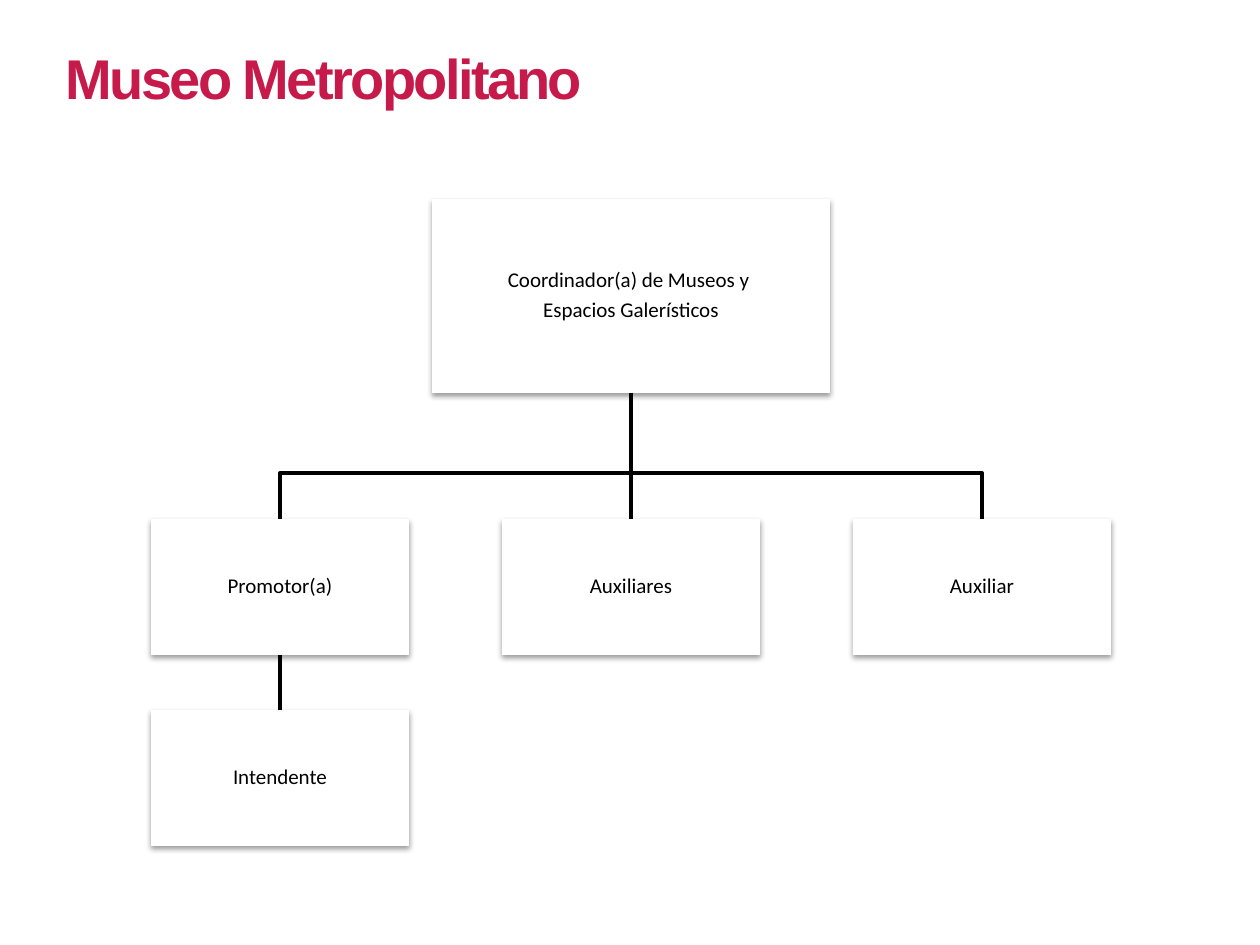
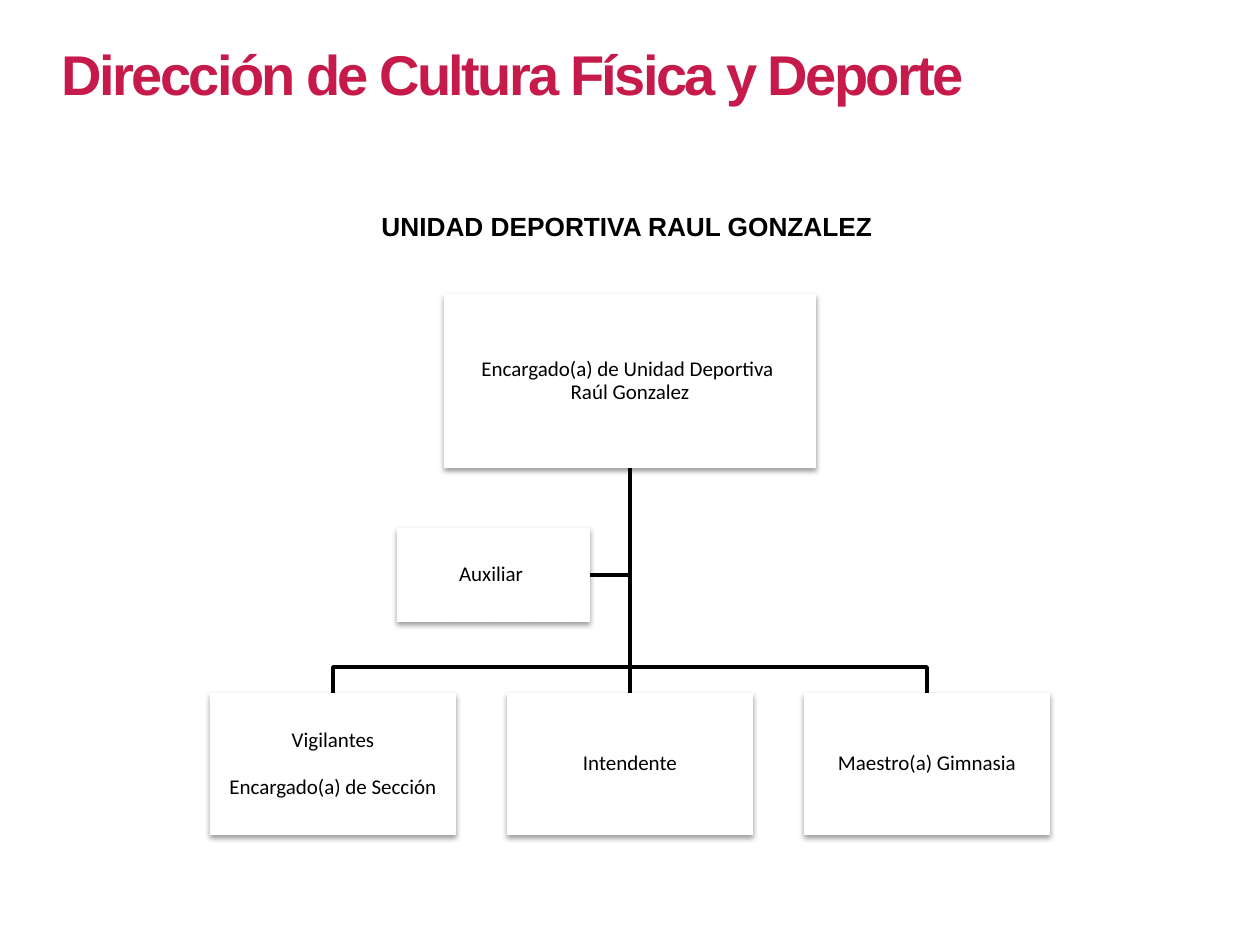
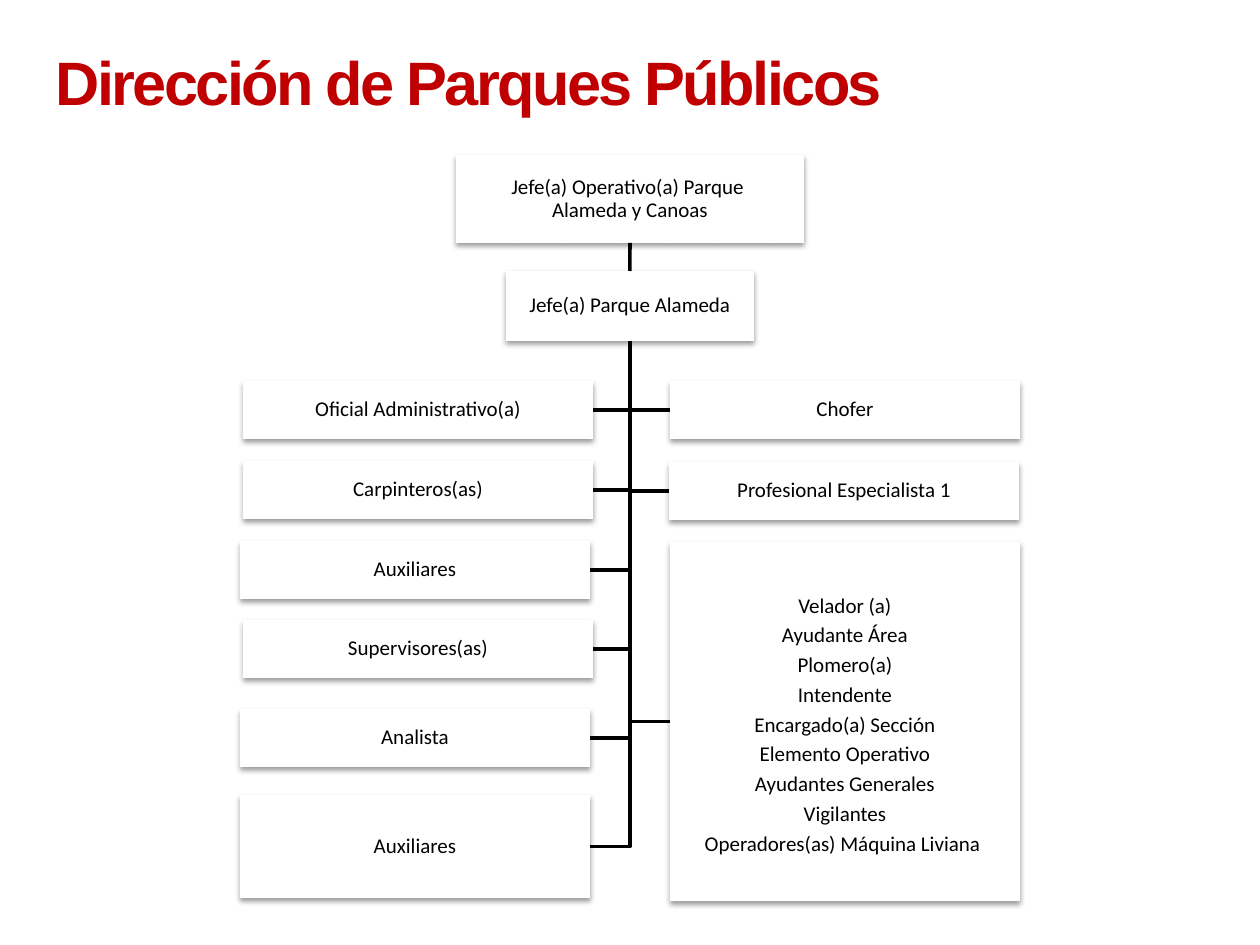
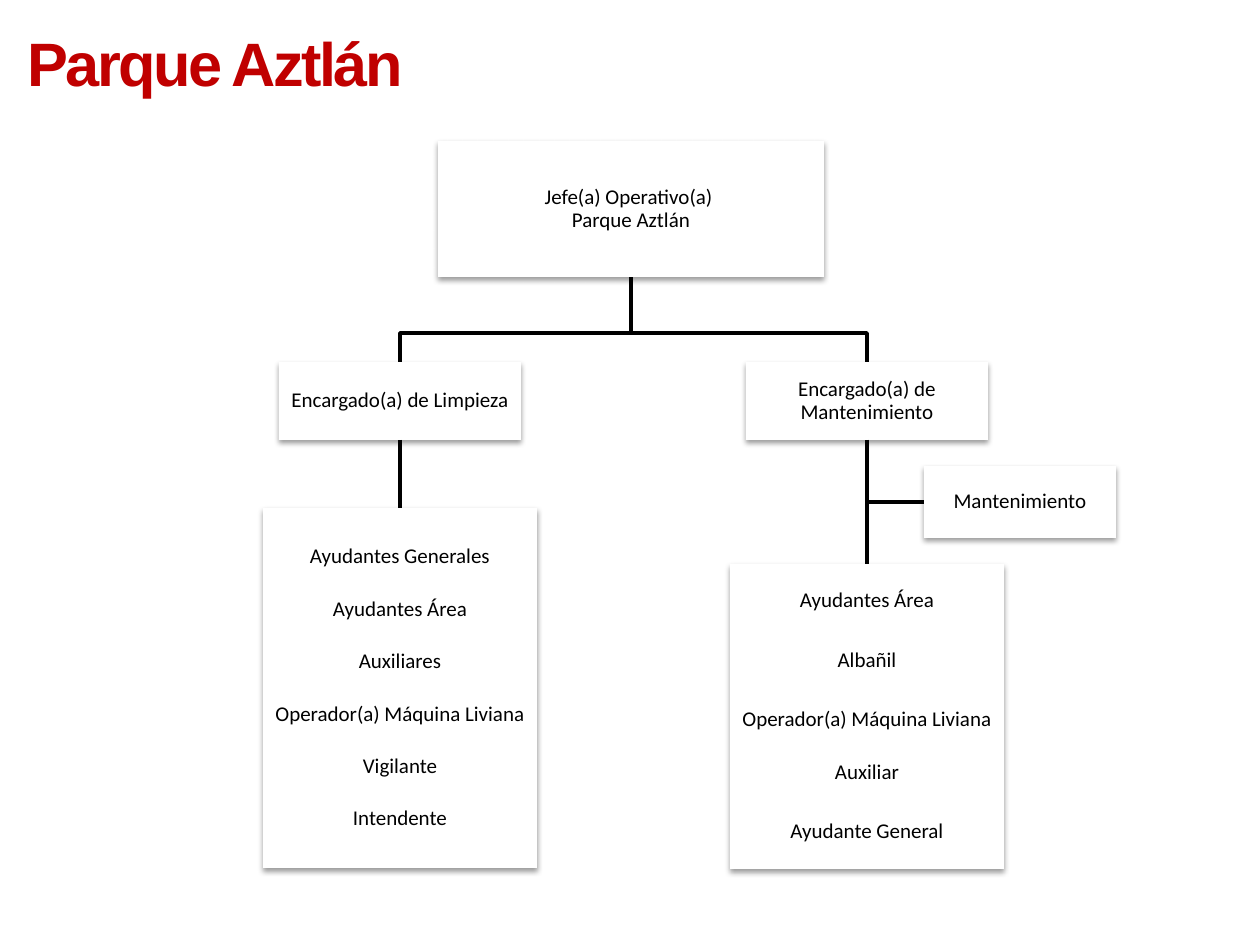
"""Build four organisation charts of museums, sport and parks."""
from lxml import etree
from pptx import Presentation
from pptx.dml.color import RGBColor
from pptx.enum.shapes import MSO_CONNECTOR, MSO_SHAPE
from pptx.enum.text import MSO_ANCHOR, MSO_AUTO_SIZE, PP_ALIGN
from pptx.oxml import parse_xml
from pptx.oxml.ns import nsdecls, qn
from pptx.util import Emu, Pt

BLACK = RGBColor(0x00, 0x00, 0x00)
WHITE = RGBColor(0xFF, 0xFF, 0xFF)
ROSE = RGBColor(0xC5, 0x1A, 0x4A)
RED = RGBColor(0xC0, 0x00, 0x00)
RECT = MSO_SHAPE.RECTANGLE
STRAIGHT = MSO_CONNECTOR.STRAIGHT
TOP, MIDDLE = MSO_ANCHOR.TOP, MSO_ANCHOR.MIDDLE
LEFT, CENTER = PP_ALIGN.LEFT, PP_ALIGN.CENTER
NO_FIT = MSO_AUTO_SIZE.NONE
SCALE = 914400 / 126
TITLE_ONLY = 5
SHADE = (
    f'<a:outerShdw {nsdecls("a")} blurRad="40000" dist="20000" dir="5400000" '
    'rotWithShape="0"><a:srgbClr val="000000"><a:alpha val="38000"/>'
    '</a:srgbClr></a:outerShdw>'
)


def px(*sizes):
    """Turn px lengths into EMU."""
    return [Emu(round(size * SCALE)) for size in sizes]


def style(para, face, size, color, bold=False):
    """Set the font of a paragraph."""
    font = para.font
    font.name, font.size, font.bold = face, Pt(size), bold
    font.color.rgb = color


def new_slide(deck, text, place, size, color):
    """Add a slide with its title."""
    slide = deck.slides.add_slide(deck.slide_layouts[TITLE_ONLY])
    title = slide.shapes.title
    title.left, title.top, title.width, title.height = px(*place)
    frame = title.text_frame
    frame.text = text
    frame.auto_size, frame.vertical_anchor = NO_FIT, TOP
    para = frame.paragraphs[0]
    para.alignment = LEFT
    style(para, "Arial", size, color, True)
    para.runs[0]._r.get_or_add_rPr().set("spc", "-150")
    return slide


def heading(slide, text, place):
    """Add a bold line above a chart."""
    frame = slide.shapes.add_textbox(*px(*place)).text_frame
    frame.word_wrap = False
    frame.text = text
    style(frame.paragraphs[0], "Arial", 15, BLACK, True)


def post(slide, text, place, gaps=(), pitch=0.9):
    """Add a shadowed box for one post or a list of posts."""
    box = slide.shapes.add_shape(RECT, *px(*place))
    box.fill.solid()
    box.fill.fore_color.rgb = WHITE
    box.line.fill.background()
    box.shadow.inherit = False
    box._element.spPr.find(qn("a:effectLst")).append(parse_xml(SHADE))
    frame = box.text_frame
    frame.word_wrap, frame.vertical_anchor = True, MIDDLE
    frame.margin_left = frame.margin_right = px(1)[0]
    frame.margin_top = frame.margin_bottom = px(1)[0]
    frame.text = text
    for para in frame.paragraphs:
        para.alignment, para.line_spacing = CENTER, pitch
        style(para, "Calibri", 12, BLACK)
    for para, gap in zip(frame.paragraphs, gaps):
        para.space_after = Pt(gap)
    return box


def ink(line):
    """Give a line its colour and weight."""
    line.color.rgb = BLACK
    line.width = Pt(2)


def link(slide, boss, box):
    """Join two boxes, one straight below the other."""
    wire = slide.shapes.add_connector(STRAIGHT, 0, 0, 0, 0)
    wire.begin_connect(boss, 2)
    wire.end_connect(box, 0)
    ink(wire.line)
    etree.SubElement(wire._element.spPr, qn("a:effectLst"))


def bend(slide, start, *points):
    """Draw an open line through the given points."""
    path = slide.shapes.build_freeform(*start)
    path.add_line_segments(points, close=False)
    wire = path.convert_to_shape()
    wire.fill.background()
    wire.shadow.inherit = False
    ink(wire.line)


def foot(box):
    """Return the middle of a box's lower side."""
    return box.left + box.width // 2, box.top + box.height


def fork(slide, boss, box, bar):
    """Lead from a box along a bar and down to another box."""
    x, y = foot(boss)
    end = foot(box)[0]
    level = px(bar)[0]
    bend(slide, (x, y), (x, level), (end, level), (end, box.top))


def branch(slide, boss, box):
    """Lead from a box down and sideways to another box."""
    x, y = foot(boss)
    level = box.top + box.height // 2
    side = box.left if box.left > x else box.left + box.width
    bend(slide, (x, y), (x, level), (side, level))


def trio(slide, boss, posts, start, step, bar):
    """Add three equal boxes under a bar and return them."""
    x, y, width, height = start
    boxes = [
        post(slide, text, (x + i * step, y, width, height), gaps)
        for i, (text, gaps) in enumerate(posts)
    ]
    fork(slide, boss, boxes[0], bar)
    link(slide, boss, boxes[1])
    fork(slide, boss, boxes[2], bar)
    return boxes


def museum(deck):
    """Add the museum slide."""
    slide = new_slide(deck, "Museo Metropolitano", (53, 37, 858, 81), 32, ROSE)
    boss = post(slide, "Coordinador(a) de Museos y \nEspacios Galerísticos",
                (432, 199, 398, 194), (4.2,))
    posts = [("Promotor(a)", ()), ("Auxiliares", ()), ("Auxiliar", ())]
    row = trio(slide, boss, posts, (151, 519, 258, 136), 351, 473)
    link(slide, row[0], post(slide, "Intendente", (151, 710, 258, 136)))


def sport(deck):
    """Add the sports slide."""
    slide = new_slide(deck, "Dirección de Cultura Física y Deporte",
                      (49, 33, 969, 81), 32, ROSE)
    heading(slide, "UNIDAD DEPORTIVA RAUL GONZALEZ", (369, 204, 522, 44))
    boss = post(slide, "Encargado(a) de Unidad Deportiva \vRaúl Gonzalez",
                (444, 294, 372, 174))
    posts = [("Vigilantes\nEncargado(a) de Sección", (14,)),
             ("Intendente", ()), ("Maestro(a) Gimnasia", ())]
    trio(slide, boss, posts, (210, 693, 246, 142), 297, 667)
    branch(slide, boss, post(slide, "Auxiliar ", (397, 528, 193, 94)))


def parks(deck):
    """Add the public parks slide."""
    slide = new_slide(deck, "Dirección de Parques Públicos",
                      (43, 38, 949, 87), 35, RED)
    head = post(slide, "Jefe(a) Operativo(a) Parque \vAlameda y Canoas",
                (456, 155, 348, 88))
    boss = post(slide, "Jefe(a) Parque Alameda", (506, 271, 248, 70))
    link(slide, head, boss)
    staff = [
        ("Oficial Administrativo(a)", 243, 381, 58),
        ("Carpinteros(as)", 243, 461, 58),
        ("Auxiliares", 240, 541, 58),
        ("Supervisores(as)", 243, 620, 58),
        ("Analista", 240, 709, 58),
        ("Auxiliares", 240, 795, 103),
        ("Chofer", 670, 381, 58),
        ("Profesional Especialista 1", 669, 462, 58),
    ]
    for text, x, y, height in staff:
        branch(slide, boss, post(slide, text, (x, y, 350, height)))
    crew = ("Velador (a)", "Ayudante Área", "Plomero(a)", "Intendente",
            "Encargado(a) Sección", "Elemento Operativo",
            "Ayudantes Generales", "Vigilantes",
            "Operadores(as) Máquina Liviana ")
    branch(slide, boss, post(slide, "\v".join(crew), (670, 542, 350, 359),
                             pitch=Pt(17)))


def aztlan(deck):
    """Add the Aztlán park slide."""
    slide = new_slide(deck, "Parque Aztlán", (15, 19, 446, 87), 35, RED)
    boss = post(slide, "Jefe(a) Operativo(a) \vParque Aztlán",
                (438, 141, 386, 136))
    clean = post(slide, "Encargado(a) de Limpieza", (279, 362, 242, 78))
    mend = post(slide, "Encargado(a) de Mantenimiento", (746, 362, 242, 78))
    for box in (clean, mend):
        fork(slide, boss, box, 333)
    crew = ("Ayudantes Generales", "Ayudantes Área", "Auxiliares",
            "Operador(a) Máquina Liviana", "Vigilante", "Intendente")
    link(slide, clean, post(slide, "\n".join(crew), (263, 508, 274, 360),
                            (17,) * 5))
    crew = ("Ayudantes Área", "Albañil", "Operador(a) Máquina Liviana",
            "Auxiliar", "Ayudante General")
    link(slide, mend, post(slide, "\n".join(crew), (730, 564, 274, 305),
                           (21, 21, 17, 21)))
    branch(slide, mend, post(slide, "Mantenimiento", (924, 466, 192, 72)))


def main():
    """Build and save the deck."""
    deck = Presentation()
    deck.slide_width, deck.slide_height = px(1260, 945)
    for build in (museum, sport, parks, aztlan):
        build(deck)
    deck.save("out.pptx")


if __name__ == "__main__":
    main()
